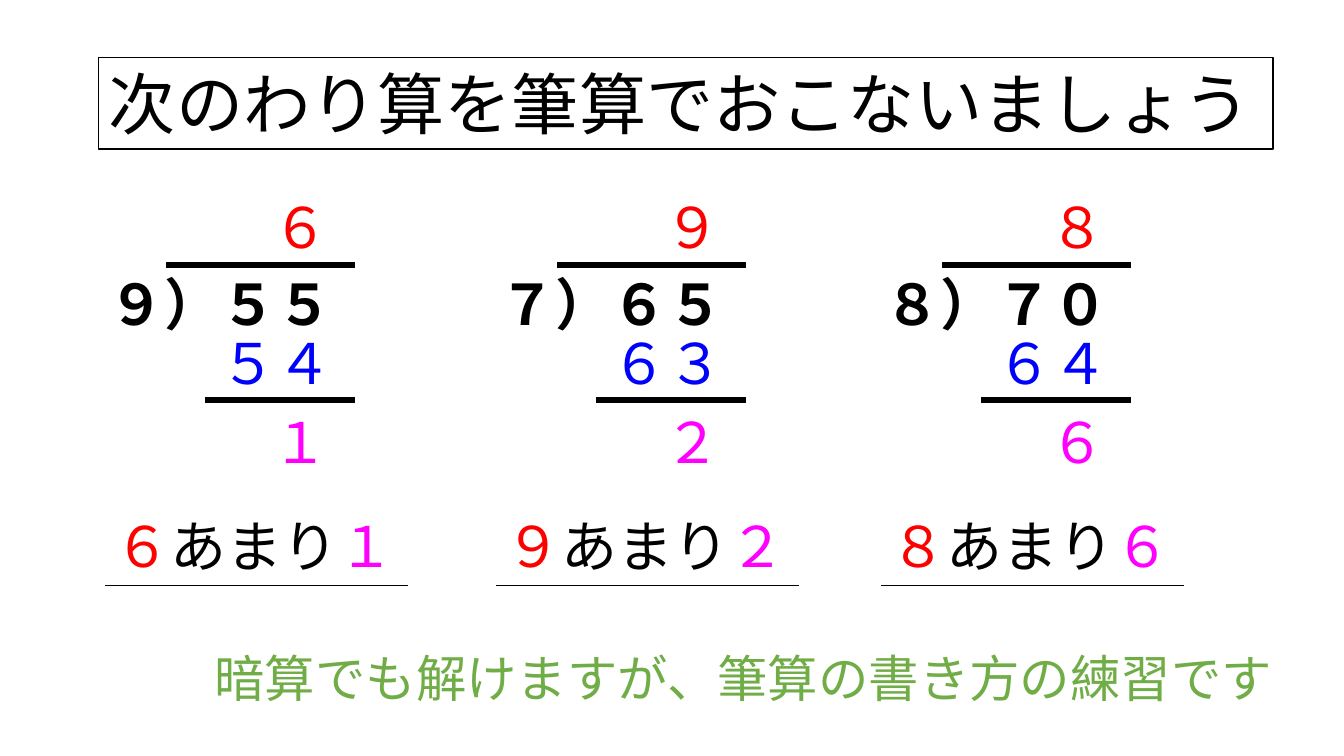
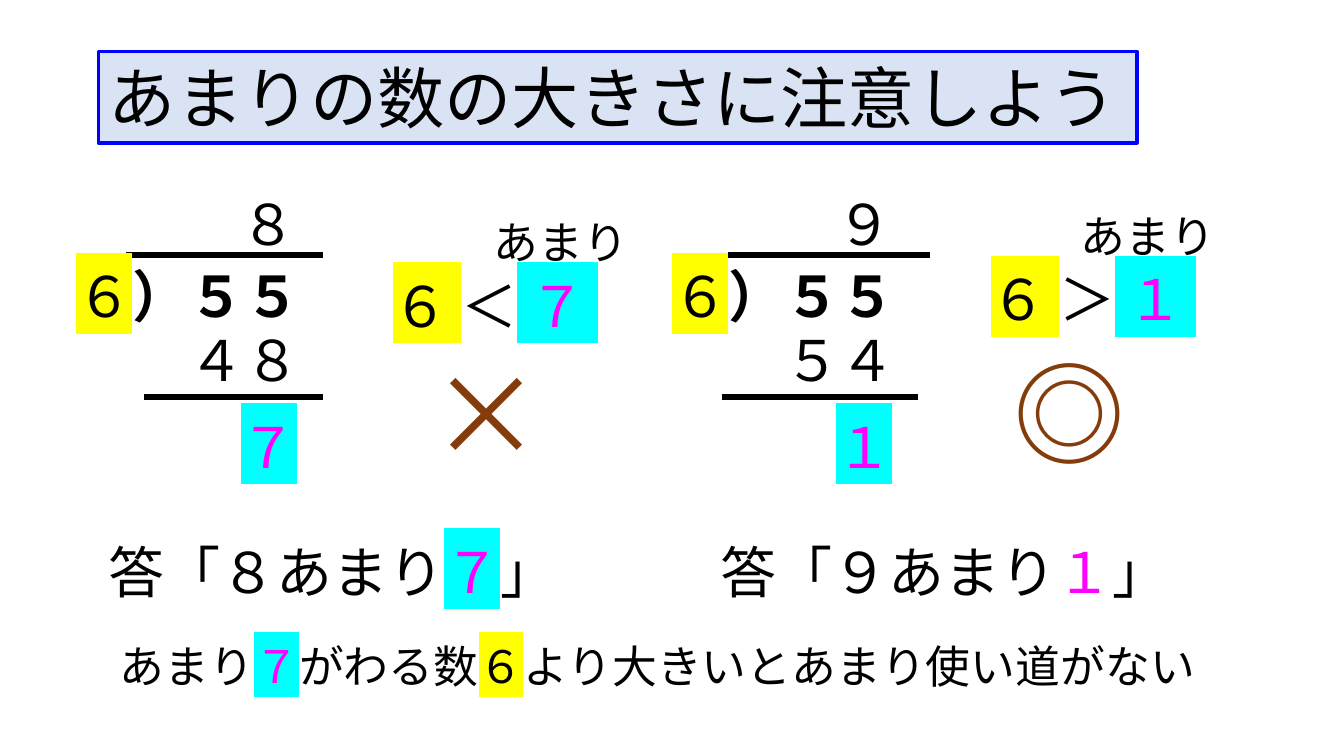
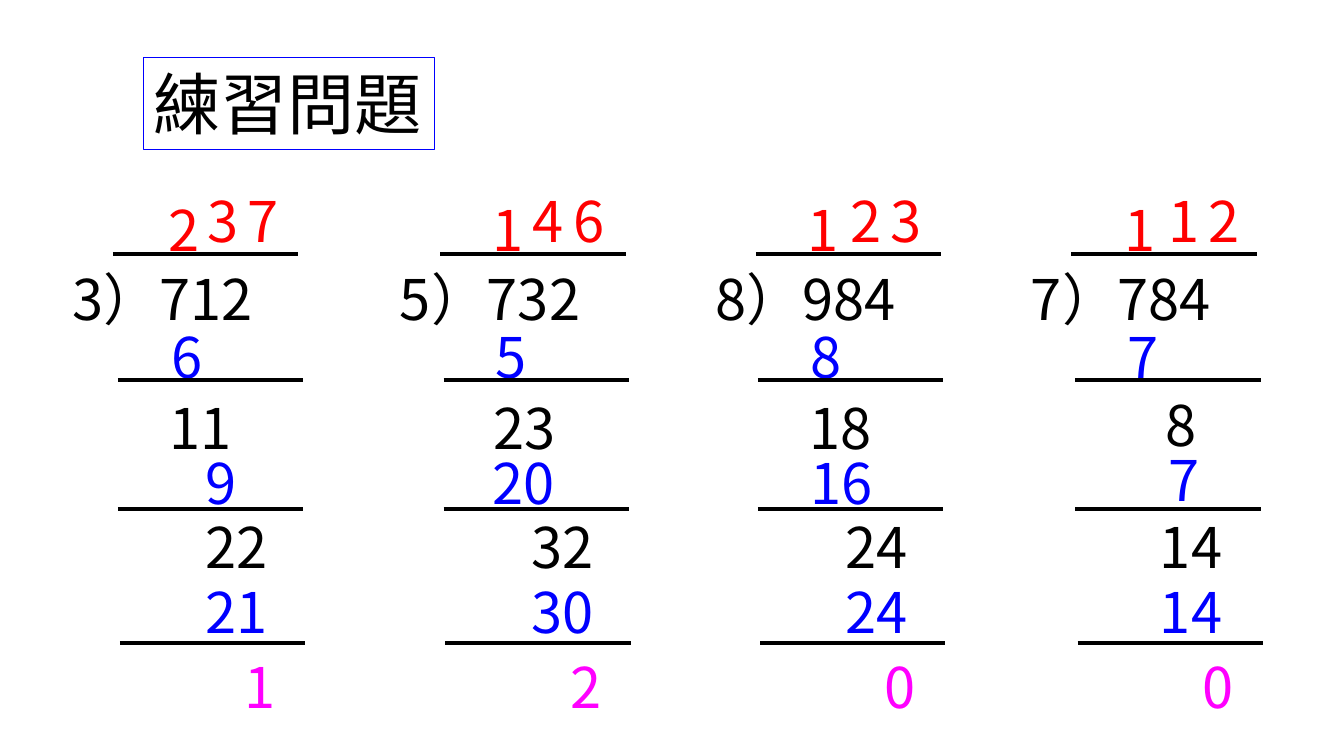
from lxml import etree
from pptx import Presentation
from pptx.dml.color import RGBColor
from pptx.enum.shapes import MSO_CONNECTOR
from pptx.enum.text import MSO_ANCHOR, MSO_AUTO_SIZE, PP_ALIGN
from pptx.oxml.ns import qn
from pptx.util import Pt

PX = 9144  # 100 px to the inch
FONT = "Noto Sans CJK JP"
LINE = MSO_CONNECTOR.STRAIGHT
GROW, FIXED = MSO_AUTO_SIZE.SHAPE_TO_FIT_TEXT, MSO_AUTO_SIZE.NONE
TOP, LEFT = MSO_ANCHOR.TOP, PP_ALIGN.LEFT
TITLE_ONLY = 5
C = {"black": "000000", "red": "FF0000", "blue": "0000FF", "pink": "FF00FF",
     "green": "70AD47", "brown": "843C0B", "pale": "DAE3F3",
     "yellow": "FFFF00", "cyan": "00FFFF"}


def rgb(name):
    return RGBColor.from_string(C[name])


def emu(*lengths):
    return [round(v * PX) for v in lengths]


def add_run(p, text, color="black", mark=None, bold=False, size=40):
    r = p.add_run()
    r.text = text
    for key, value in {"size": Pt(size), "bold": bold}.items():
        setattr(r.font, key, value)
    r.font.color.rgb = rgb(color)
    rpr = r.font._element
    if mark:
        hl = etree.SubElement(rpr, qn("a:highlight"))
        etree.SubElement(hl, qn("a:srgbClr")).set("val", C[mark])
    for tag in ("a:latin", "a:ea"):
        etree.SubElement(rpr, qn(tag)).set("typeface", FONT)


def format_frame(tf, wrap, fit):
    for key, value in {"word_wrap": wrap, "auto_size": fit,
                       "vertical_anchor": TOP}.items():
        setattr(tf, key, value)


def text(s, x, y, w, runs, size=40, spacing=None):
    """One line of text; runs are (text, colour, highlight, bold)."""
    h = 102 if spacing else round(size * 1.68 + 10)
    tf = s.shapes.add_textbox(*emu(x, y, w, h)).text_frame
    format_frame(tf, True, GROW)
    p = tf.paragraphs[0]
    if spacing:
        p.line_spacing = spacing
    for run in runs:
        add_run(p, *run, size=size)


def rule(s, x1, x2, y, width=4.5):
    ln = s.shapes.add_connector(LINE, *emu(x1, y, x2, y))
    ln.line.color.rgb = rgb("black")
    ln.line.width = Pt(width)
    etree.SubElement(ln._element.spPr, qn("a:effectLst"))


def titled_slide(prs, title, box, border, width, fill=None):
    s = prs.slides.add_slide(prs.slide_layouts[TITLE_ONLY])
    sp = s.shapes.title
    sp.left, sp.top, sp.width, sp.height = emu(*box)
    if fill:
        sp.fill.solid()
        sp.fill.fore_color.rgb = rgb(fill)
    sp.line.color.rgb = rgb(border)
    sp.line.width = Pt(width)
    format_frame(sp.text_frame, False, FIXED)
    p = sp.text_frame.paragraphs[0]
    p.alignment = LEFT
    add_run(p, title, size=48)
    return s


def division(s, x, y, quotient, dividend, product, remainder, bars, drops):
    """Short division; bars are (start, end), drops are row offsets."""
    bar_y, dividend_y, remainder_y = drops
    text(s, x + 163, y, 67, [quotient])
    text(s, x + 111, y + 135, 135, [product])
    for (start, end), dy in zip(bars, (bar_y, 211)):
        rule(s, x + start, x + end, y + dy)
    text(s, x, y + dividend_y, 254, dividend)
    text(s, x + 163, y + remainder_y, 78, [remainder])


def division_slide(prs):
    s = titled_slide(prs, "次のわり算を筆算でおこないましょう",
                     (98, 57, 1165, 91), "black", 1)
    problems = [(98, "６", "９）５５", "５４", "１"),
                (486, "９", "７）６５", "６３", "２"),
                (868, "８", "８）７０", "６４", "６")]
    for x, q, dividend, product, rest in problems:
        division(s, x, 186, (q, "red"), [(dividend, "black", None, True)],
                 (product, "blue"), (rest, "pink"),
                 [(67, 254), (105, 254)], (77, 76, 213))
        # Answer
        text(s, x + 6, 503, 302, [(q, "red"), ("あまり",), (rest, "pink")])
        rule(s, x + 6, x + 307, 581, 0.5)
    text(s, 203, 637, 1078, [("暗算でも解けますが、筆算の書き方の練習です", "green")], 36)


def comparison(s, x, y, label_dx, sign, rest):
    """Divisor against remainder, with a label over the remainder."""
    text(s, x + label_dx, y, 155, [("あまり",)], 32)
    text(s, x, y + 56, 256, [("６ ", "black", "yellow"), (sign,),
                             (f" {rest} ", "pink", "cyan")])


def remainder_slide(prs):
    s = titled_slide(prs, "あまりの数の大きさに注意しよう",
                     (98, 51, 1030, 91), "blue", 2.25, "pale")
    dividend = [("６", "black", "yellow"), ("）５５", "black", None, True)]
    cases = [(66, "８", "４８", "７", [(59, 254), (77, 254)]),
             (657, "９", "５４", "１", [(65, 266), (59, 254)])]
    for x, q, product, rest, bars in cases:
        division(s, x, 183, (q,), dividend, (product,),
                 (rest, "pink", "cyan"), bars, (70, 72, 221))
    comparison(s, 380, 208, 100, "＜", "７")
    comparison(s, 973, 202, 89, "＞", "１")
    # Verdicts
    for x, sign in ((417, "×"), (996, "◎")):
        text(s, x, 337, 138, [(sign, "brown")], 80)
    # Answers
    for x, q, rest, mark in ((98, "８", "７", "cyan"), (705, "９", "１", None)):
        text(s, x, 528, 490, [(f"答「{q}あまり",), (rest, "pink", mark), ("」",)])
    text(s, 109, 629, 1104,
         [("あまり",), ("７", "pink", "cyan"), ("がわる数",),
          ("６", "black", "yellow"), ("より大きいとあまり使い道がない",)], 32)


# Rows of a long division: top, colour, line spacing
STEPS = [(224, "black", 1.5), (282, "blue", 1.5), (156, "red", 1.5),
         (180, "red", None), (180, "red", None), (352, "black", 1.5),
         (440, "blue", None), (504, "black", None), (568, "blue", None),
         (642, "pink", None)]


def long_division(s, x, bar_dx, texts, offsets, lift):
    for (y, color, spacing), value, dx in zip(STEPS, texts, offsets):
        dy = lift if y in (352, 440) else 0
        text(s, x + dx, y - dy, 234 if dx == 0 else 114,
             [(value, color)], spacing=spacing)
    for dx, y in ((50, 252), (bar_dx, 377), (bar_dx, 505), (bar_dx + 2, 638)):
        rule(s, x + dx, x + dx + 184, y, 3)


def practice_slide(prs):
    s = titled_slide(prs, "練習問題", (142, 57, 289, 91), "blue", 0.75)
    problems = [
        (55, "3）712 6 2 3 7 11 9 22 21 1",
         (0, 98, 95, 134, 174, 96, 132, 132, 132, 171), 0),
        (53, "5）732 5 1 4 6 23 20 32 30 2",
         (0, 95, 92, 131, 172, 93, 92, 130, 130, 169), 0),
        (52, "8）984 8 1 2 3 18 16 24 24 0",
         (0, 94, 91, 134, 174, 93, 94, 129, 129, 168), 0),
        (54, "7）784 7 1 1 2 8 7 14 14 0",
         (0, 96, 93, 136, 176, 133, 136, 128, 128, 170), 3)]
    for x, (bar_dx, texts, offsets, lift) in zip((62, 387, 700, 1013), problems):
        long_division(s, x, bar_dx, texts.split(), offsets, lift)


def main():
    prs = Presentation()
    prs.slide_width, prs.slide_height = emu(1333.33, 750)
    for build in (division_slide, remainder_slide, practice_slide):
        build(prs)
    prs.save("out.pptx")


if __name__ == "__main__":
    main()
